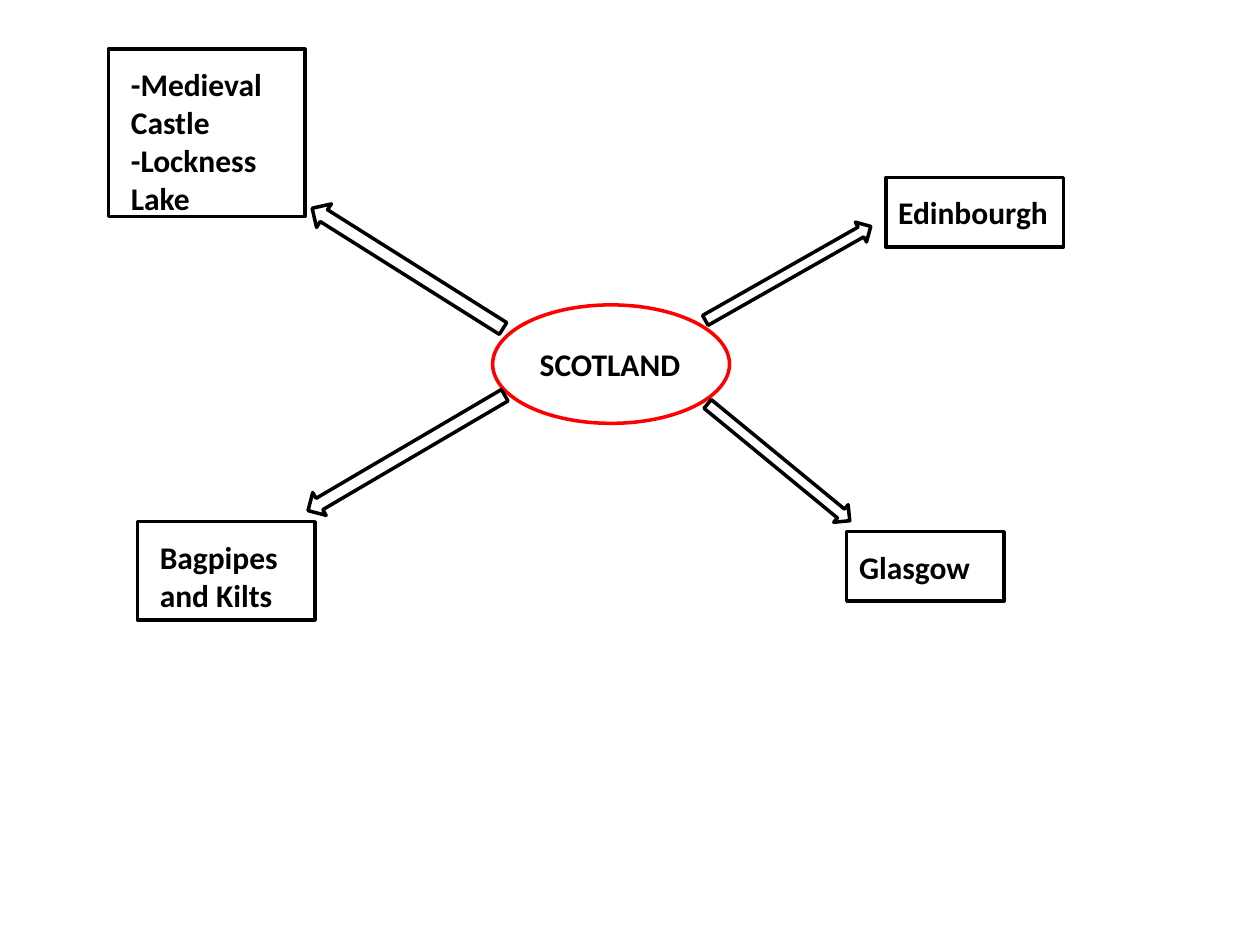
from pptx import Presentation
from pptx.dml.color import RGBColor
from pptx.enum.shapes import MSO_SHAPE
from pptx.enum.text import MSO_ANCHOR, MSO_AUTO_SIZE, PP_ALIGN
from pptx.util import Inches, Pt

ELLIPSE, RECT, ARROW = MSO_SHAPE.OVAL, MSO_SHAPE.RECTANGLE, MSO_SHAPE.RIGHT_ARROW
LEFT, MIDDLE, GROW = PP_ALIGN.LEFT, MSO_ANCHOR.MIDDLE, MSO_AUTO_SIZE.SHAPE_TO_FIT_TEXT

THEME = {
    "paper": RGBColor(0xFF, 0xFF, 0xFF),
    "ink": RGBColor(0, 0, 0),
    "accent": RGBColor(0xFF, 0, 0),
    "line": Pt(2),
    "font": {"name": "Calibri", "size": Pt(18), "bold": True},
}

prs = Presentation()
prs.slide_width, prs.slide_height = Inches(10), Inches(7.5)
s = prs.slides.add_slide(prs.slide_layouts[6])


def add_outline(kind, box, color=THEME["ink"], rotation=0):
    sp = s.shapes.add_shape(kind, *map(Inches, box))
    sp.shadow.inherit = False
    sp.rotation = rotation
    sp.fill.solid()
    sp.fill.fore_color.rgb = THEME["paper"]
    sp.line.color.rgb = color
    sp.line.width = THEME["line"]
    return sp


def write(sp, lines, frame):
    tf = sp.text_frame
    for key, value in frame.items():
        setattr(tf, key, value)
    for i, line in enumerate(lines):
        p = tf.add_paragraph() if i else tf.paragraphs[0]
        p.alignment = LEFT
        r = p.add_run()
        r.text = line
        r.font.color.rgb = THEME["ink"]
        for key, value in THEME["font"].items():
            setattr(r.font, key, value)


centered = {"word_wrap": True, "vertical_anchor": MIDDLE}
growing = {"word_wrap": True, "auto_size": GROW}

# Central topic
topic = add_outline(ELLIPSE, (3.91, 2.42, 1.88, 0.94), THEME["accent"])
write(topic, ["SCOTLAND"], centered)

# Arrows from the topic to its branches
for box, angle in [
    ((5.45, 3.58, 1.46, 0.18), 39.4),
    ((5.5, 2.08, 1.51, 0.18), 330.4),
    ((2.34, 2.02, 1.79, 0.22), 212.2),
    ((2.32, 3.49, 1.81, 0.21), 149.6),
]:
    add_outline(ARROW, box, rotation=angle)

# Cities on the right
for city, box in [
    ("Edinbourgh", (7.03, 1.41, 1.41, 0.55)),
    ("Glasgow", (6.72, 4.22, 1.25, 0.55)),
]:
    write(add_outline(RECT, box), [city], centered)

# Sights and traditions on the left: frame with a text box over it
for frame_box, text_box, lines in [
    ((0.86, 0.39, 1.56, 1.33), (0.94, 0.47, 1.41, 1.31),
     ["-Medieval Castle", "-Lockness", "Lake"]),
    ((1.09, 4.14, 1.41, 0.78), (1.17, 4.22, 1.33, 0.71),
     ["Bagpipes and Kilts"]),
]:
    add_outline(RECT, frame_box)
    write(s.shapes.add_textbox(*map(Inches, text_box)), lines, growing)

prs.save("out.pptx")
